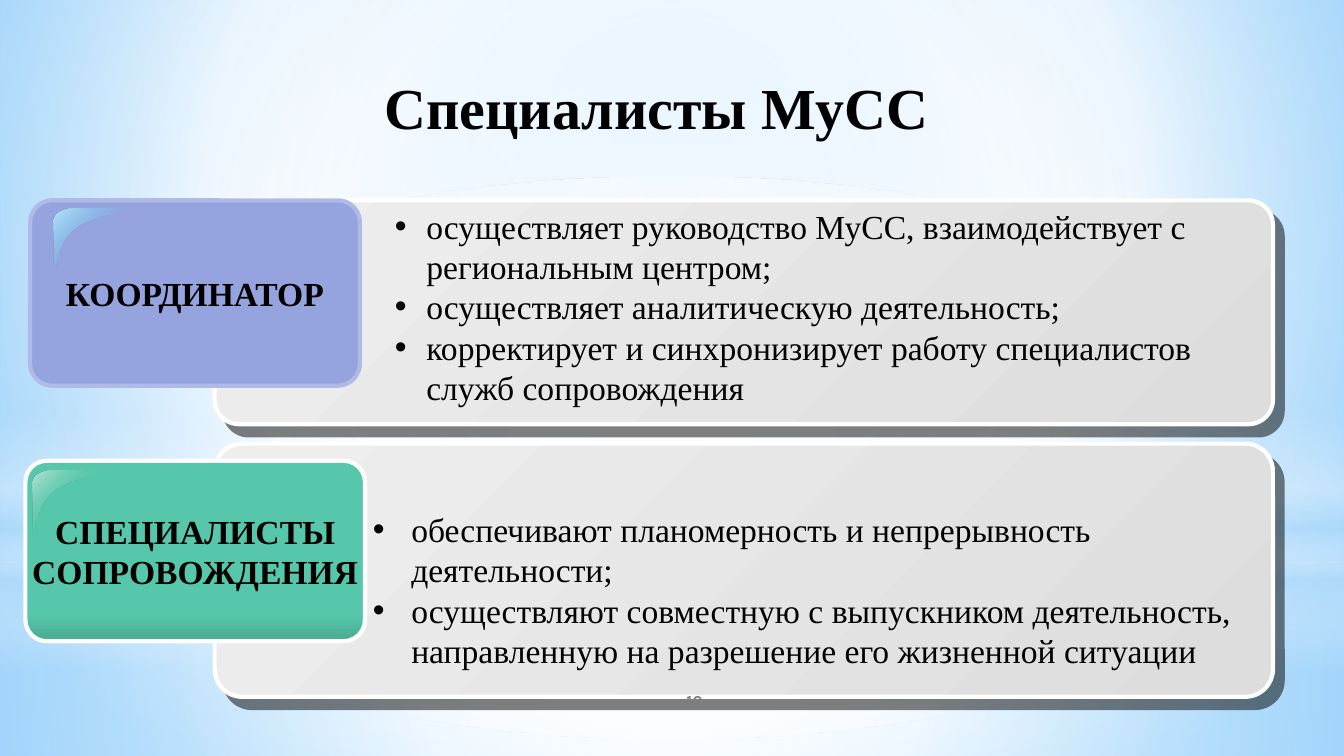
from dataclasses import dataclass
from lxml import etree
from pptx import Presentation
from pptx.dml.color import RGBColor
from pptx.enum.shapes import MSO_SHAPE
from pptx.enum.text import MSO_ANCHOR, MSO_AUTO_SIZE, PP_ALIGN
from pptx.oxml.ns import nsdecls, qn
from pptx.util import Cm, Pt

RECT = MSO_SHAPE.RECTANGLE
ROUND = MSO_SHAPE.ROUNDED_RECTANGLE
OVAL = MSO_SHAPE.OVAL
TOP, MIDDLE = MSO_ANCHOR.TOP, MSO_ANCHOR.MIDDLE
LEFT, CENTER = PP_ALIGN.LEFT, PP_ALIGN.CENTER
NO_FIT = MSO_AUTO_SIZE.NONE
WIDE, HIGH = 33.87, 19.05


@dataclass(frozen=True)
class Theme:
    font: str = "Times New Roman"
    small: str = "Karla"
    ink: str = "000000"
    grey: str = "808080"
    white: str = "FFFFFF"
    sky: str = "B4DCFA"
    blue: str = "95A4DE"
    pale: str = "AFBBE6"
    head: float = 41.4
    text: float = 24
    note: float = 12
    edge: float = 3
    back: tuple = ((0, "9ED5FF"), (60, "FFFFFF"), (100, "5BB9FF"))
    panel: tuple = ((0, "EEEEEE"), (100, "DDDDDD"))
    green: tuple = ((85, "56C7AA"), (100, "4AAA91"))
    ice: tuple = ((0, "BEE5F9"), (50, "5ECCF3", 0), (100, "BEE5F9"))
    mint: tuple = ((0, "BDE3D6"), (50, "56C7AA", 0), (100, "BDE3D6"))


THEME = Theme()
MID = (50, 50, 50, 50)
DECOR = [
    (RECT, 14.17, 4.88, MID,
     ((0, THEME.white, 91), (37, THEME.white, 76), (100, THEME.sky, 79))),
    (RECT, 0, 14.17, MID,
     ((0, THEME.white, 89), (48, THEME.white, 62), (100, THEME.sky, 79))),
    (RECT, 10.46, 6.35, 90,
     ((0, THEME.white, 0), (29, THEME.white, 30), (45, THEME.sky, 40),
      (55, THEME.white, 26), (65, THEME.sky, 60), (100, THEME.white, 0))),
    (OVAL, 4.45, 14.17, MID, ((0, THEME.white), (56, THEME.white, 0))),
]
DUTIES = [
    "осуществляет руководство МуСС, взаимодействует с региональным центром;",
    "осуществляет аналитическую деятельность;",
    "корректирует и синхронизирует работу специалистов служб сопровождения",
]
TASKS = [
    "обеспечивают планомерность и непрерывность деятельности;",
    "осуществляют совместную с выпускником деятельность, "
    "направленную на разрешение его жизненной ситуации",
]


def put(item, **values):
    for name, value in values.items():
        setattr(item, name, value)


def place(item, left, top, width, height):
    put(item, left=Cm(left), top=Cm(top), width=Cm(width), height=Cm(height))


def blend(owner, fill, stops, way):
    fill.solid()
    solid = owner.find(".//" + qn("a:solidFill"))
    parts = ""
    for pos, tint, *clear in stops:
        alpha = f'<a:alpha val="{clear[0] * 1000}"/>' if clear else ""
        parts += f'<a:gs pos="{pos * 1000}"><a:srgbClr val="{tint}">{alpha}</a:srgbClr></a:gs>'
    if isinstance(way, tuple):
        sides = " ".join(f'{k}="{v * 1000}"' for k, v in zip("ltrb", way))
        turn = f'<a:path path="circle"><a:fillToRect {sides}/></a:path>'
    else:
        turn = f'<a:lin ang="{way * 60000}" scaled="0"/>'
    grad = etree.fromstring(
        f'<a:gradFill rotWithShape="1" {nsdecls("a")}><a:gsLst>{parts}</a:gsLst>{turn}</a:gradFill>')
    solid.getparent().replace(solid, grad)


def paint(shape, fill, way=90, line=None):
    shape.shadow.inherit = False
    if isinstance(fill, str):
        shape.fill.solid()
        shape.fill.fore_color.rgb = RGBColor.from_string(fill)
    else:
        blend(shape.element, shape.fill, fill, way)
    if line:
        shape.line.color.rgb = RGBColor.from_string(line)
        shape.line.width = Pt(THEME.edge)
    else:
        shape.line.fill.background()


def form(slide, kind, box, fill, way=90, line=None, bend=None):
    shape = slide.shapes.add_shape(kind, *map(Cm, box))
    paint(shape, fill, way, line)
    if bend:
        shape.adjustments[0] = bend
    return shape


def write(shape, lines, size, font=THEME.font, tint=THEME.ink, bold=True,
          align=CENTER, anchor=MIDDLE, wrap=True, dent=None):
    frame = shape.text_frame
    put(frame, word_wrap=wrap, auto_size=NO_FIT, vertical_anchor=anchor)
    for spot, line in enumerate(lines):
        para = frame.add_paragraph() if spot else frame.paragraphs[0]
        put(para, alignment=align, space_before=Pt(0))
        if dent:
            props = para._p.get_or_add_pPr()
            props.set("marL", str(Cm(dent)))
            props.set("indent", str(-Cm(dent)))
            etree.SubElement(props, qn("a:buFont")).set("typeface", "Arial")
            etree.SubElement(props, qn("a:buChar")).set("char", "•")
        run = para.add_run()
        run.text = line
        put(run.font, name=font, size=Pt(size), bold=bold)
        run.font.color.rgb = RGBColor.from_string(tint)


def lift(slide, holder, box):
    place(holder, *box)
    slide.shapes.element.append(holder.element)


def panel(slide, top, height):
    shape = form(slide, ROUND, (5.41, top, 26.67, height), THEME.panel, 45, THEME.white, 0.109)
    effects = shape.element.spPr.find(qn("a:effectLst"))
    effects.append(etree.fromstring(
        f'<a:outerShdw {nsdecls("a")} blurRad="0" dist="{Pt(10.6)}" dir="{49 * 60000}" '
        f'algn="ctr" rotWithShape="0"><a:srgbClr val="{THEME.ink}">'
        '<a:alpha val="50000"/></a:srgbClr></a:outerShdw>'))


def tag(slide, box, lines, fill, line):
    shape = form(slide, ROUND, box, fill, 90, line, 0.119)
    write(shape, lines, THEME.text, wrap=False)


def curve(*knots, steps=12):
    for step in range(1, steps + 1):
        t = step / steps
        rates = ((1 - t) ** 3, 3 * t * (1 - t) ** 2, 3 * t * t * (1 - t), t ** 3)
        yield tuple(sum(r * k[axis] for r, k in zip(rates, knots)) for axis in (0, 1))


def gloss(slide, left, top, stops):
    pen = slide.shapes.build_freeform(46, 0, scale=float(Cm(0.01)))
    pen.add_line_segments([
        *curve((46, 0), (20, 0), (0, 15), (0, 33)),
        *curve((0, 163), (10, 165), (5, 86), (61, 48)),
        *curve((61, 48), (117, 10), (226, 8), (224, 0)),
    ], close=True)
    paint(pen.convert_to_shape(Cm(left), Cm(top)), stops, 45)


def duty(slide, holder, box, lines, dent):
    lift(slide, holder, box)
    write(holder, lines, THEME.text, bold=False, align=LEFT, anchor=TOP, dent=dent)


def main():
    deck = Presentation()
    put(deck, slide_width=Cm(WIDE), slide_height=Cm(HIGH))
    slide = deck.slides.add_slide(deck.slide_layouts[3])
    title, first, second = slide.placeholders
    blend(slide.element, slide.background.fill, THEME.back, (20, 10, 20, 60))
    for kind, top, height, way, stops in DECOR:
        form(slide, kind, (0, top, WIDE, height), stops, way)

    lift(slide, title, (3.18, 1.7, 26.72, 1.96))
    write(title, ["Специалисты МуСС"], THEME.head)

    panel(slide, 5.05, 5.64)
    tag(slide, (0.76, 5.05, 8.31, 4.67), ["КООРДИНАТОР"], THEME.blue, THEME.pale)
    gloss(slide, 1.35, 5.26, THEME.ice)
    duty(slide, first, (9.7, 5.05, 21.77, 7.44), DUTIES, 0.79)

    panel(slide, 11.18, 6.38)
    tag(slide, (0.64, 11.61, 8.56, 4.55), ["СПЕЦИАЛИСТЫ", "СОПРОВОЖДЕНИЯ"],
        THEME.green, THEME.white)
    duty(slide, second, (9.14, 12.7, 22.33, 5.38), TASKS, 0.97)
    gloss(slide, 0.81, 11.86, THEME.mint)

    page = slide.shapes.add_textbox(*map(Cm, (14.12, 17.15, 6.78, 1.02)))
    write(page, ["10"], THEME.note, THEME.small, THEME.grey)
    deck.save("out.pptx")


if __name__ == "__main__":
    main()
